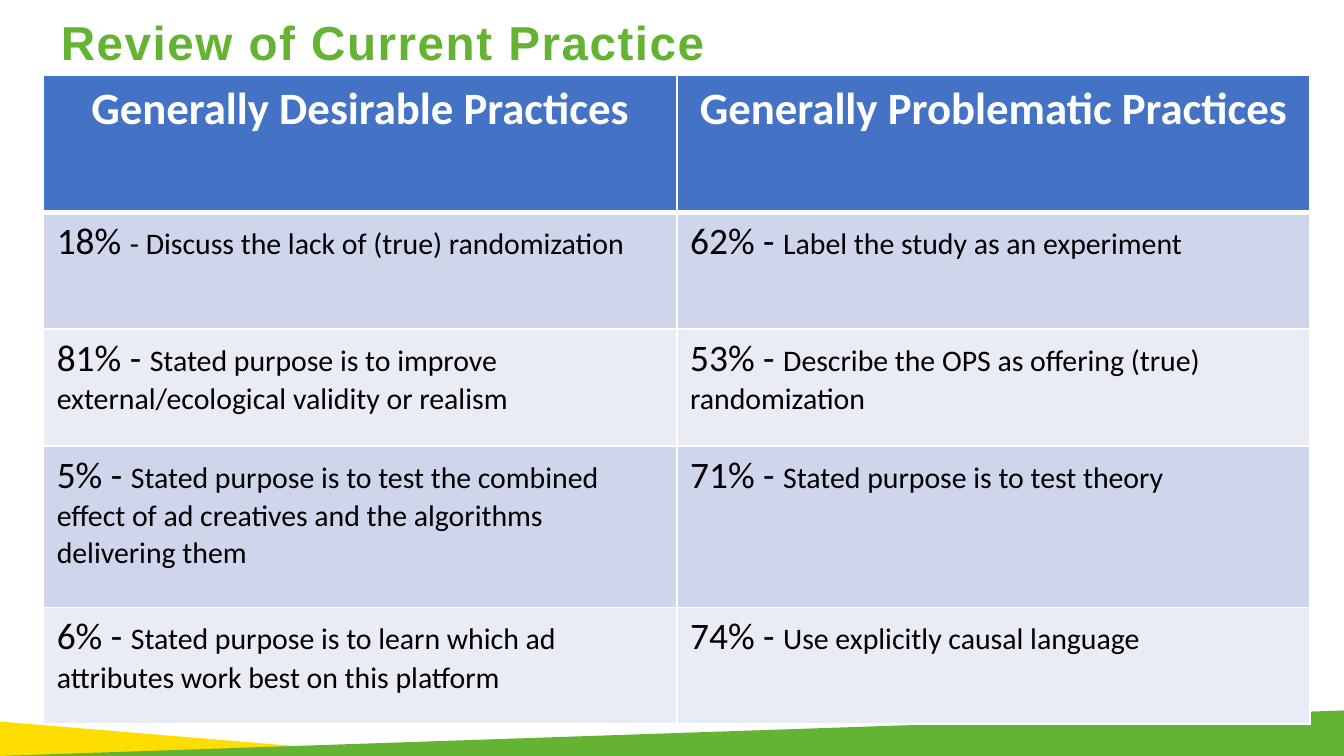
from dataclasses import dataclass
from typing import NamedTuple

import pptx
import pptx.dml.color
import pptx.enum.text
import pptx.util
from lxml import etree
from pptx.oxml.ns import qn

Cm = pptx.util.Cm
Pt = pptx.util.Pt
RGB = pptx.dml.color.RGBColor.from_string


@dataclass(frozen=True)
class Theme:
    green: str = "65B333"
    yellow: str = "FEDD00"
    header: str = "4472C4"
    bands: tuple[str, str] = ("CFD5EA", "E9EBF5")
    white: str = "FFFFFF"
    black: str = "000000"
    title_font: str = "Arial"
    table_font: str = "Calibri"
    title_size: float = 25.5
    header_size: int = 24
    lead_size: int = 20
    body_size: int = 16


class Finding(NamedTuple):
    lead: str
    text: str


class Wedge(NamedTuple):
    color: str
    corners: list[tuple[float, float]]


THEME = Theme()
WIDTH, HEIGHT = 25.4, 14.29

WEDGES = [
    Wedge(THEME.yellow, [(0, 13.64), (7.82, HEIGHT), (0, HEIGHT)]),
    Wedge(THEME.green, [(WIDTH, 13.43), (0, HEIGHT), (WIDTH, HEIGHT)]),
]

HEADERS = ["Generally Desirable Practices", "Generally Problematic Practices"]
FINDINGS = [
    (Finding("18% ", "- Discuss the lack of (true) randomization"),
     Finding("62% - ", "Label the study as an experiment")),
    (Finding("81% - ", "Stated purpose is to improve external/ecological validity or realism"),
     Finding("53% - ", "Describe the OPS as offering (true) randomization")),
    (Finding("5% - ", "Stated purpose is to test the combined effect of ad creatives "
                      "and the algorithms delivering them"),
     Finding("71% - ", "Stated purpose is to test theory")),
    (Finding("6% - ", "Stated purpose is to learn which ad attributes work best on this platform"),
     Finding("74% - ", "Use explicitly causal language")),
]
COL_WIDTH = 11.97
ROW_HEIGHTS = [2.58, 2.21, 2.21, 3.05, 2.21]


def add_wedge(s: pptx.slide.Slide, wedge: Wedge) -> None:
    start, *rest = [(Cm(x), Cm(y)) for x, y in wedge.corners]
    builder = s.shapes.build_freeform(*start)
    builder.add_line_segments(rest, close=True)
    sp = builder.convert_to_shape()
    sp.shadow.inherit = False
    sp.fill.solid()
    sp.fill.fore_color.rgb = RGB(wedge.color)
    sp.line.fill.background()


def add_title(s: pptx.slide.Slide, text: str) -> None:
    sp = s.shapes.add_textbox(Cm(0.97), Cm(0.18), Cm(22.12), Cm(1.52))
    tf = sp.text_frame
    tf.word_wrap = True
    tf.margin_left = tf.margin_right = tf.margin_top = tf.margin_bottom = Cm(0.18)
    p = tf.paragraphs[0]
    p.line_spacing = 0.9
    r = p.add_run()
    r.text = text
    r.font.name = THEME.title_font
    r.font.size = Pt(THEME.title_size)
    r.font.bold = True
    r.font.color.rgb = RGB(THEME.green)
    r.font._element.set("spc", "80")


def style_cell(cell: pptx.table._Cell, fill: str, top: int = 1, bottom: int = 1) -> None:
    """Draw white borders, with widths in points, and fill the cell."""
    tc_pr = cell._tc.get_or_add_tcPr()
    for tag, width in (("a:lnL", 1), ("a:lnR", 1), ("a:lnT", top), ("a:lnB", bottom)):
        ln = etree.SubElement(tc_pr, qn(tag), w=str(Pt(width)))
        solid = etree.SubElement(ln, qn("a:solidFill"))
        etree.SubElement(solid, qn("a:srgbClr"), val=THEME.white)
    cell.fill.solid()
    cell.fill.fore_color.rgb = RGB(fill)


def style_font(p: pptx.text.text._Paragraph, color: str, bold: bool) -> None:
    p.font.name = THEME.table_font
    p.font.bold = bold
    p.font.color.rgb = RGB(color)


def write_header(cell: pptx.table._Cell, text: str) -> None:
    style_cell(cell, THEME.header, bottom=3)
    p = cell.text_frame.paragraphs[0]
    p.alignment = pptx.enum.text.PP_ALIGN.CENTER
    p.add_run().text = text
    style_font(p, THEME.white, bold=True)
    p.font.size = Pt(THEME.header_size)


def write_finding(cell: pptx.table._Cell, finding: Finding, fill: str, top: int) -> None:
    style_cell(cell, fill, top=top)
    p = cell.text_frame.paragraphs[0]
    style_font(p, THEME.black, bold=False)
    for text, size in zip(finding, (THEME.lead_size, THEME.body_size)):
        r = p.add_run()
        r.text = text
        r.font.size = Pt(size)


def add_practice_table(s: pptx.slide.Slide) -> None:
    table = s.shapes.add_table(
        len(ROW_HEIGHTS), len(HEADERS), Cm(0.82), Cm(1.43),
        Cm(COL_WIDTH * len(HEADERS)), Cm(sum(ROW_HEIGHTS)),
    ).table
    for column in table.columns:
        column.width = Cm(COL_WIDTH)
    for row, height in zip(table.rows, ROW_HEIGHTS):
        row.height = Cm(height)
    for col, text in enumerate(HEADERS):
        write_header(table.cell(0, col), text)
    for row, findings in enumerate(FINDINGS, start=1):
        fill = THEME.bands[(row - 1) % 2]
        for col, finding in enumerate(findings):
            write_finding(table.cell(row, col), finding, fill, top=3 if row == 1 else 1)


def main() -> None:
    prs = pptx.Presentation()
    prs.slide_width, prs.slide_height = Cm(WIDTH), Cm(HEIGHT)
    s = prs.slides.add_slide(prs.slide_layouts[6])
    for wedge in WEDGES:
        add_wedge(s, wedge)
    add_title(s, "Review of Current Practice")
    add_practice_table(s)
    prs.save("out.pptx")


if __name__ == "__main__":
    main()
